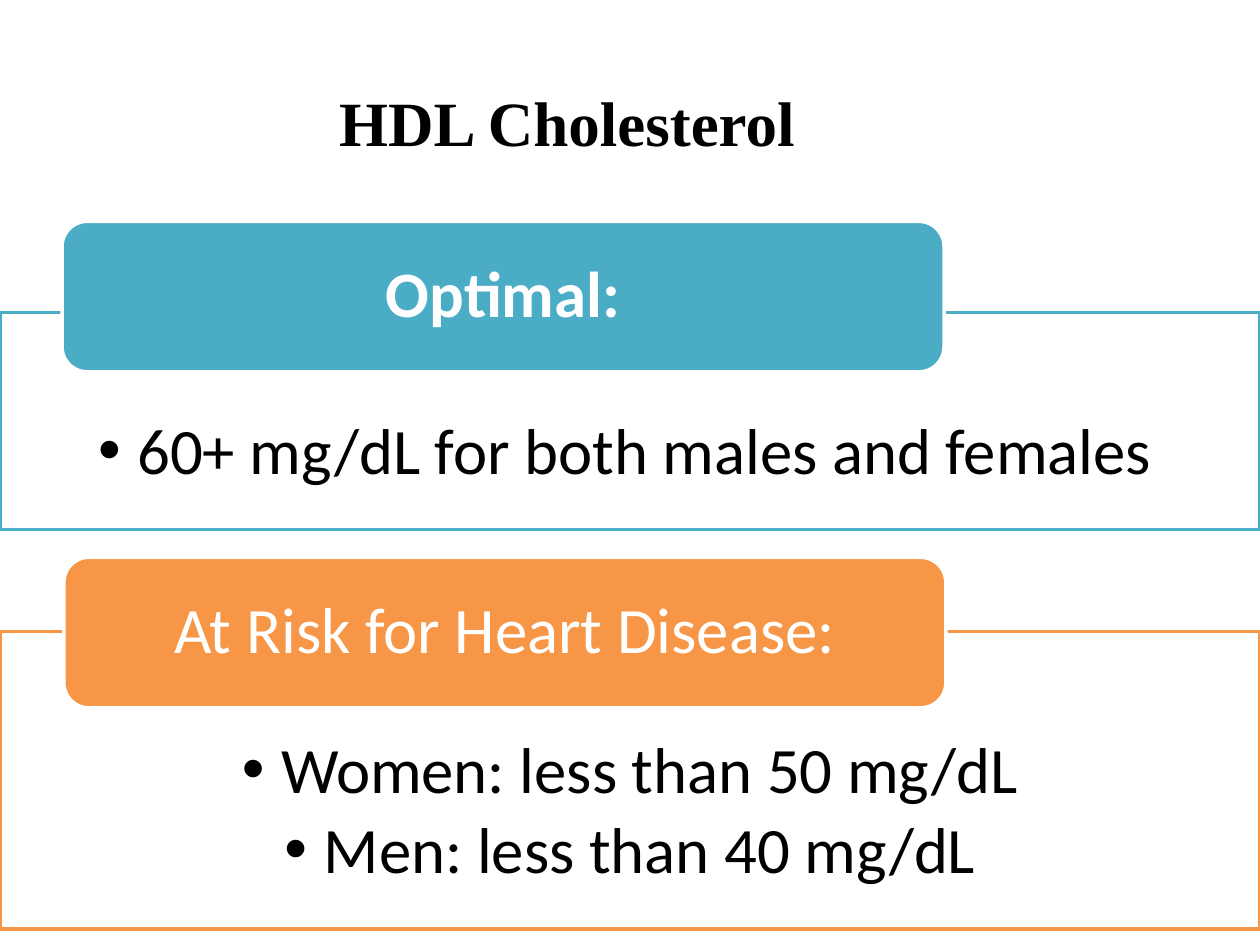
from dataclasses import dataclass

from lxml.etree import SubElement
from pptx import Presentation
from pptx.dml.color import RGBColor
from pptx.enum.shapes import MSO_SHAPE
from pptx.enum.text import MSO_ANCHOR as Anchor, MSO_AUTO_SIZE as AutoSize, PP_ALIGN as Align
from pptx.oxml.ns import qn
from pptx.util import Pt

COLORS = {
    "black": "000000",
    "white": "FFFFFF",
    "optimal": "4BACC6",
    "risk": "F79646",
}
TEXT_SIZE = 37
HEADER_WIDTH, HEADER_HEIGHT = 504, 86
SLIDE_WIDTH, SLIDE_HEIGHT = 720, 540


@dataclass
class Section:
    heading: str
    bold: bool
    items: list[str]
    item_align: Align
    color: str
    header_left: float
    header_top: float
    panel_top: float
    panel_height: float


SECTIONS = [
    Section("Optimal:", True, ["60+ mg/dL for both males and females"],
            Align.LEFT, "optimal", 35.5, 126.5, 178.5, 124),
    Section("At Risk for Heart Disease:", False,
            ["Women: less than 50 mg/dL", "Men: less than 40 mg/dL"],
            Align.CENTER, "risk", 36.5, 318.5, 361, 170),
]


def rgb(name: str) -> RGBColor:
    return RGBColor.from_string(COLORS[name])


def place(shape, left: float, top: float, width: float, height: float) -> None:
    shape.left, shape.top = Pt(left), Pt(top)
    shape.width, shape.height = Pt(width), Pt(height)


def paint(shape, fill: str, line: str) -> None:
    shape.fill.solid()
    shape.fill.fore_color.rgb = rgb(fill)
    shape.line.color.rgb = rgb(line)
    shape.line.width = Pt(2)


def set_margins(text_frame, side: float, top: float, bottom: float) -> None:
    text_frame.margin_left = text_frame.margin_right = Pt(side)
    text_frame.margin_top, text_frame.margin_bottom = Pt(top), Pt(bottom)


def format_text(text_frame, color: str, align: Align, size: float = TEXT_SIZE,
                font: str = "Calibri", bold: bool = False) -> None:
    text_frame.word_wrap = True
    text_frame.auto_size = AutoSize.NONE
    for paragraph in text_frame.paragraphs:
        paragraph.alignment = align
        for run in paragraph.runs:
            run.font.name = font
            run.font.size = Pt(size)
            run.font.bold = bold
            run.font.color.rgb = rgb(color)


def add_bullet(paragraph) -> None:
    paragraph.line_spacing = 0.9
    paragraph.space_before = Pt(0)
    paragraph.space_after = Pt(5.5)
    properties = paragraph._p.get_or_add_pPr()
    properties.set("marL", str(Pt(22.5)))
    properties.set("indent", str(Pt(-22.5)))
    SubElement(properties, qn("a:buChar")).set("char", "•")


def draw_panel(panel, section: Section) -> None:
    place(panel, 0, section.panel_top, SLIDE_WIDTH, section.panel_height)
    paint(panel, "white", section.color)
    text_frame = panel.text_frame
    text_frame.text = "\n".join(section.items)
    text_frame.vertical_anchor = Anchor.TOP
    set_margins(text_frame, 56, 60.5, 21)
    format_text(text_frame, "black", section.item_align)
    for paragraph in text_frame.paragraphs:
        add_bullet(paragraph)


def draw_header(slide, section: Section) -> None:
    header = slide.shapes.add_shape(
        MSO_SHAPE.ROUNDED_RECTANGLE, Pt(section.header_left), Pt(section.header_top),
        Pt(HEADER_WIDTH), Pt(HEADER_HEIGHT))
    header.shadow.inherit = False
    paint(header, section.color, "white")
    text_frame = header.text_frame
    text_frame.text = section.heading
    text_frame.vertical_anchor = Anchor.MIDDLE
    set_margins(text_frame, 18, 0, 0)
    format_text(text_frame, "white", Align.CENTER, bold=section.bold)
    text_frame.paragraphs[0].line_spacing = 0.9


def main() -> None:
    presentation = Presentation()
    presentation.slide_width, presentation.slide_height = Pt(SLIDE_WIDTH), Pt(SLIDE_HEIGHT)
    slide = presentation.slides.add_slide(presentation.slide_layouts.get_by_name("Two Content"))
    title, *panels = list(slide.placeholders)

    place(title, 0, 30, 648, 79)
    title.text_frame.text = "HDL Cholesterol"
    title.text_frame.vertical_anchor = Anchor.MIDDLE
    format_text(title.text_frame, "black", Align.CENTER, 36, "Times New Roman", True)

    for panel, section in zip(panels, SECTIONS):
        draw_panel(panel, section)
        draw_header(slide, section)

    presentation.save("out.pptx")


if __name__ == "__main__":
    main()
